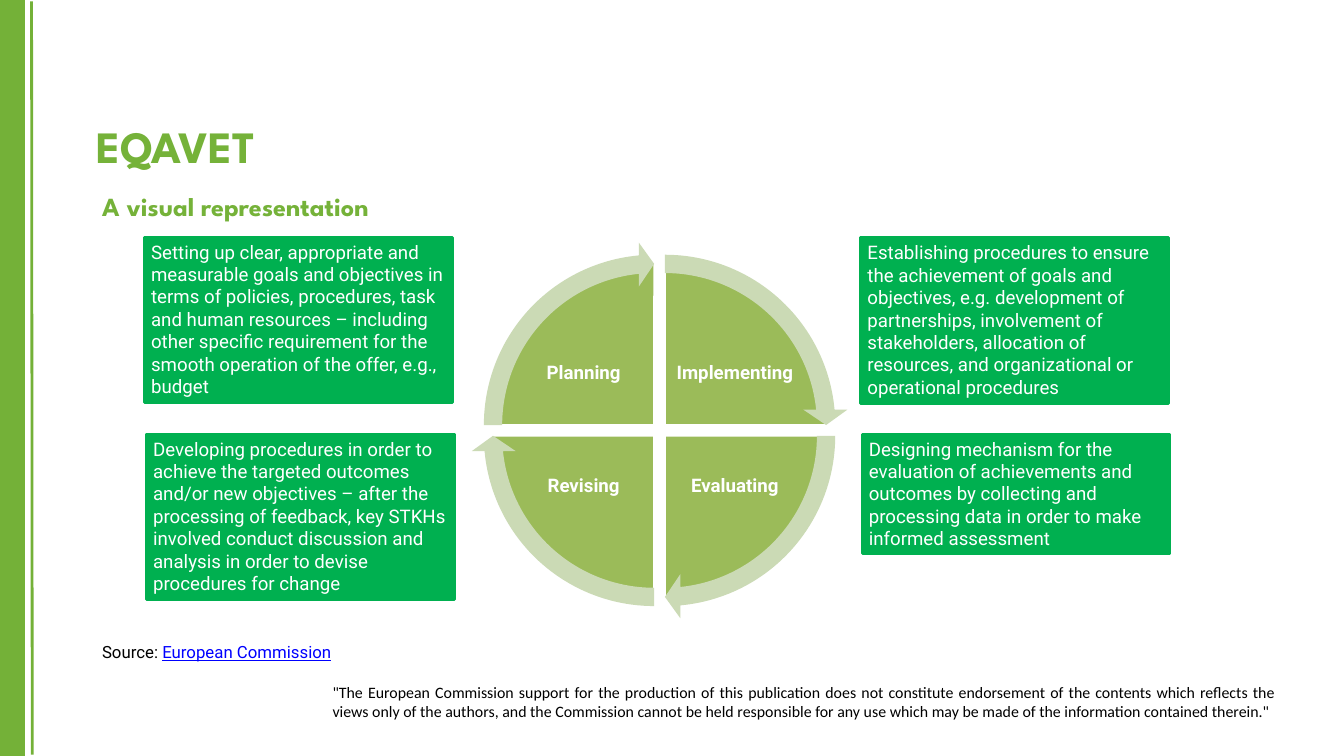
from dataclasses import dataclass

from lxml import etree
from pptx import Presentation
from pptx.dml.color import RGBColor
from pptx.enum import shapes, text
from pptx.oxml.ns import qn
from pptx.util import Inches, Pt


@dataclass(frozen=True)
class Theme:
    brand: str = "74B138"
    heading: str = "75B239"
    quadrant: str = "9BBB59"
    arrow: str = "CBDAB5"
    box: str = "00B050"
    white: str = "FFFFFF"
    black: str = "000000"
    link: str = "0000FF"
    heading_font: str = "League Spartan"
    body_font: str = "Roboto"
    notice_font: str = "Calibri"
    title_size: int = 48
    subtitle_size: int = 28
    body_size: int = 20
    source_size: int = 18
    notice_size: int = 17


@dataclass(frozen=True)
class Stage:
    name: str
    column: int
    row: int
    start: int  # adjustment units: 54 is a quarter turn


@dataclass(frozen=True)
class Description:
    left: float
    top: float
    height: float
    words: str


THEME = Theme()
QUARTER = 54
FULL_TURN = 4 * QUARTER
PIE_SIZE, ARROW_SIZE = 4.85, 5.45
GAP = 0.16

STAGES = [
    Stage("Implementing", 1, 0, 162),
    Stage("Evaluating", 1, 1, 0),
    Stage("Revising", 0, 1, 54),
    Stage("Planning", 0, 0, 108),
]

DESCRIPTIONS = [
    Description(2.18, 6.46, 2.46, "Developing procedures in order to achieve the targeted outcomes and/or new "
                "objectives – after the processing of feedback, key STKHs involved conduct discussion and "
                "analysis in order to devise procedures for change"),
    Description(2.15, 3.53, 2.46, "Setting up clear, appropriate and measurable goals and objectives in terms of "
                "policies, procedures, task and human resources – including other specific requirement for the "
                "smooth operation of the offer, e.g., budget"),
    Description(12.83, 6.46, 1.78, "Designing mechanism for the evaluation of achievements and outcomes by "
                "collecting and processing data in order to make informed assessment"),
    Description(12.81, 3.54, 2.46, "Establishing procedures to ensure the achievement of goals and objectives, "
                "e.g. development of partnerships, involvement of stakeholders, allocation of resources, and "
                "organizational or operational procedures"),
]


def color(value: str) -> RGBColor:
    return RGBColor.from_string(value)


def place(shape, left: float, top: float, width: float, height: float) -> None:
    shape.left, shape.top = Inches(left), Inches(top)
    shape.width, shape.height = Inches(width), Inches(height)


def write(shape, words: str, *, size: int, fill: str, font: str = THEME.body_font, bold: bool = False,
          underline: bool = False, align=text.PP_ALIGN.LEFT, anchor=text.MSO_ANCHOR.TOP,
          fit: bool = True, inset: float | None = None):
    """Append a formatted run to the shape's first paragraph."""
    frame = shape.text_frame
    frame.word_wrap = True
    frame.vertical_anchor = anchor
    frame.auto_size = text.MSO_AUTO_SIZE.SHAPE_TO_FIT_TEXT if fit else text.MSO_AUTO_SIZE.NONE
    if inset is not None:
        frame.margin_left = frame.margin_right = frame.margin_top = frame.margin_bottom = Inches(inset)
    paragraph = frame.paragraphs[0]
    paragraph.alignment = align
    run = paragraph.add_run()
    run.text = words
    run.font.size, run.font.name = Pt(size), font
    run.font.bold, run.font.underline = bold, underline
    run.font.color.rgb = color(fill)
    return paragraph


def add_text_box(slide, left: float, top: float, width: float, height: float):
    return slide.shapes.add_textbox(Inches(left), Inches(top), Inches(width), Inches(height))


def add_shape(slide, kind, left: float, top: float, width: float, height: float, fill: str,
              line: str | None = None, line_width: float = 0, adjustments: tuple = ()):
    shape = slide.shapes.add_shape(kind, Inches(left), Inches(top), Inches(width), Inches(height))
    shape.shadow.inherit = False
    shape.fill.solid()
    shape.fill.fore_color.rgb = color(fill)
    if line:
        shape.line.color.rgb = color(line)
        shape.line.width = Pt(line_width)
    else:
        shape.line.fill.background()
    for index, value in enumerate(adjustments):
        shape.adjustments[index] = value
    return shape


def add_side_band(slide) -> None:
    add_shape(slide, shapes.MSO_SHAPE.RECTANGLE, 0, 0, 0.37, 11.25, THEME.brand)
    rule = slide.shapes.add_connector(shapes.MSO_CONNECTOR.STRAIGHT,
                                      Inches(0.47), Inches(0.02), Inches(0.48), Inches(11.23))
    rule.line.color.rgb = color(THEME.brand)
    rule.line.width = Pt(3)
    etree.SubElement(rule._element.spPr, qn("a:effectLst"))


def add_headings(slide) -> None:
    title, subtitle = slide.shapes.title, slide.placeholders[1]
    place(title, 1.33, 1.71, 18.33, 0.91)
    write(title, "EQAVET", size=THEME.title_size, fill=THEME.heading, font=THEME.heading_font, bold=True)

    place(subtitle, 1.42, 2.79, 10.98, 0.57)
    properties = subtitle.text_frame.paragraphs[0]._p.get_or_add_pPr()
    properties.set("marL", "0")
    properties.set("indent", "0")
    etree.SubElement(properties, qn("a:buNone"))
    paragraph = write(subtitle, "A visual representation", size=THEME.subtitle_size, fill=THEME.heading,
                      font=THEME.heading_font, bold=True)
    paragraph.space_before = Pt(0)


def add_quadrant(slide, stage: Stage) -> None:
    end = (stage.start + QUARTER) % FULL_TURN
    add_shape(slide, shapes.MSO_SHAPE.PIE, 7.31 + GAP * stage.column, 3.9 + GAP * stage.row,
              PIE_SIZE, PIE_SIZE, THEME.quadrant, THEME.white, 2, (stage.start, end))
    # No inset, so that the longest name stays on one line
    label = add_text_box(slide, 7.79 + 2.25 * stage.column, 4.9 + 1.68 * stage.row, 1.79, 1.33)
    paragraph = write(label, stage.name, size=THEME.body_size, fill=THEME.white, bold=True, fit=False,
                      align=text.PP_ALIGN.CENTER, anchor=text.MSO_ANCHOR.MIDDLE, inset=0)
    paragraph.line_spacing = 0.9


def add_cycle_arrow(slide, stage: Stage) -> None:
    add_shape(slide, shapes.MSO_SHAPE.CIRCULAR_ARROW, 7.01 + GAP * stage.column, 3.6 + GAP * stage.row,
              ARROW_SIZE, ARROW_SIZE, THEME.arrow,
              adjustments=(0.05, 3.28, stage.start + 50.72, stage.start, 0.06))


def add_description(slide, item: Description) -> None:
    box = add_shape(slide, shapes.MSO_SHAPE.RECTANGLE, item.left, item.top, 4.58, item.height,
                    THEME.box, THEME.box, 3)
    write(box, item.words, size=THEME.body_size, fill=THEME.white)


def main() -> None:
    presentation = Presentation()
    presentation.slide_width, presentation.slide_height = Inches(20), Inches(11.25)
    slide = presentation.slides.add_slide(presentation.slide_layouts[1])

    add_side_band(slide)
    add_headings(slide)

    # Quality cycle: quadrants first, arrows over them
    for stage in STAGES:
        add_quadrant(slide, stage)
    for stage in STAGES:
        add_cycle_arrow(slide, stage)

    for item in DESCRIPTIONS:
        add_description(slide, item)

    # Source and funding notice
    source = add_text_box(slide, 1.42, 9.5, 6.6, 0.4)
    write(source, "Source: ", size=THEME.source_size, fill=THEME.black)
    write(source, "European Commission", size=THEME.source_size, fill=THEME.link, underline=True)
    notice = add_text_box(slide, 4.85, 10.11, 14.23, 0.67)
    write(notice, '"The European Commission support for the production of this publication does not constitute '
          "endorsement of the contents which reflects the views only of the authors, and the Commission cannot "
          'be held responsible for any use which may be made of the information contained therein."',
          size=THEME.notice_size, fill=THEME.black, font=THEME.notice_font, align=text.PP_ALIGN.JUSTIFY)

    presentation.save("out.pptx")


if __name__ == "__main__":
    main()
